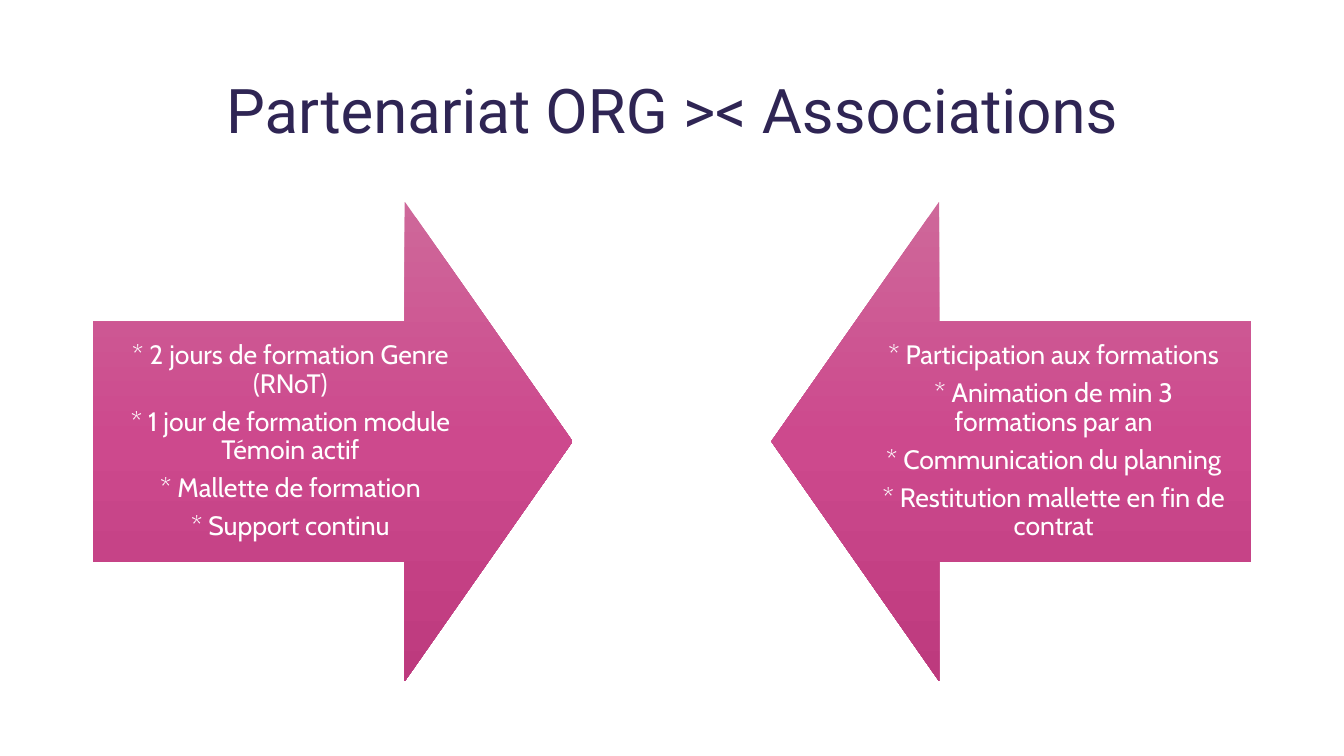
import copy
import pptx
import pptx.util
import pptx.dml.color
import pptx.enum.shapes
import pptx.enum.text
import pptx.oxml.ns

Inches, Pt = pptx.util.Inches, pptx.util.Pt
SHAPE = pptx.enum.shapes.MSO_SHAPE
ALIGN = pptx.enum.text.PP_ALIGN
ANCHOR = pptx.enum.text.MSO_ANCHOR
qn = pptx.oxml.ns.qn

# Content
TITLE = "Partenariat ORG >< Associations"
SIDES = [
    (SHAPE.RIGHT_ARROW, [
        "* 2 jours de formation Genre (RNoT)",
        "* 1 jour de formation module Témoin actif",
        "* Mallette de formation",
        "* Support continu",
    ]),
    (SHAPE.LEFT_ARROW, [
        "* Participation aux formations",
        "* Animation de min 3 formations par an",
        "* Communication du planning",
        "* Restitution mallette en fin de contrat",
    ]),
]
STOPS = ["CE689A", "CD498D", "BD3A7E"]

# Layout in inches
WIDTH, HEIGHT = 13.33, 7.5
EDGE, TOP, SIZE = 0.92, 2, 4.76
SHAFT, HEAD = 0.5, 0.35
TEXT_W, TEXT_H = 3.92, SIZE * SHAFT

# Formats
HEAD_FONT = {"name": "Roboto", "size": Pt(44)}
BODY_FONT = {"name": "Cabin", "size": Pt(19)}
HEAD_PARA = {"alignment": ALIGN.CENTER, "line_spacing": 0.9}
BODY_PARA = {**HEAD_PARA, "space_before": Pt(0), "space_after": Pt(6.65)}
FRAME = {"word_wrap": True, "vertical_anchor": ANCHOR.MIDDLE,
         "auto_size": pptx.enum.text.MSO_AUTO_SIZE.NONE}
INSET = {f"margin_{side}": Inches(0.15)
         for side in ("left", "top", "right", "bottom")}


def color(code):
    return pptx.dml.color.RGBColor.from_string(code)


def apply(target, values):
    for name, value in values.items():
        setattr(target, name, value)


def write(frame, lines, para, font, code):
    frame.text = "\n".join(lines)
    for item in frame.paragraphs:
        apply(item, para)
        for run in item.runs:
            apply(run.font, font)
            run.font.color.rgb = color(code)


def shade(shape):
    """Fill with three evenly spaced stops, from top to bottom."""
    shape.fill.gradient()
    shape.fill.gradient_angle = 270
    stops = shape.element.spPr.find(".//" + qn("a:gsLst"))
    stops.insert(1, copy.deepcopy(stops[0]))
    for i, stop in enumerate(shape.fill.gradient_stops):
        stop.position = i / (len(STOPS) - 1)
        stop.color.rgb = color(STOPS[i])


def main():
    deck = pptx.Presentation()
    deck.slide_width, deck.slide_height = Inches(WIDTH), Inches(HEIGHT)
    slide = deck.slides.add_slide(deck.slide_layouts[5])

    # Title
    title = slide.shapes.title
    apply(title, {"left": Inches(EDGE), "top": Inches(0.4),
                  "width": Inches(11.5), "height": Inches(1.45)})
    apply(title.text_frame, FRAME)
    write(title.text_frame, [TITLE], HEAD_PARA, HEAD_FONT, "2F2554")

    # Facing arrows, each with its text at the outer edge
    for i, (kind, lines) in enumerate(SIDES):
        left = WIDTH - EDGE - SIZE if i else EDGE
        arrow = slide.shapes.add_shape(
            kind, Inches(left), Inches(TOP), Inches(SIZE), Inches(SIZE))
        arrow.adjustments[0], arrow.adjustments[1] = SHAFT, HEAD
        arrow.shadow.inherit = False
        arrow.line.fill.background()
        shade(arrow)

        x = WIDTH - EDGE - TEXT_W if i else EDGE
        y = TOP + (SIZE - TEXT_H) / 2
        box = slide.shapes.add_textbox(
            Inches(x), Inches(y), Inches(TEXT_W), Inches(TEXT_H))
        apply(box.text_frame, {**FRAME, **INSET})
        write(box.text_frame, lines, BODY_PARA, BODY_FONT, "FFFFFF")

    deck.save("out.pptx")


if __name__ == "__main__":
    main()
